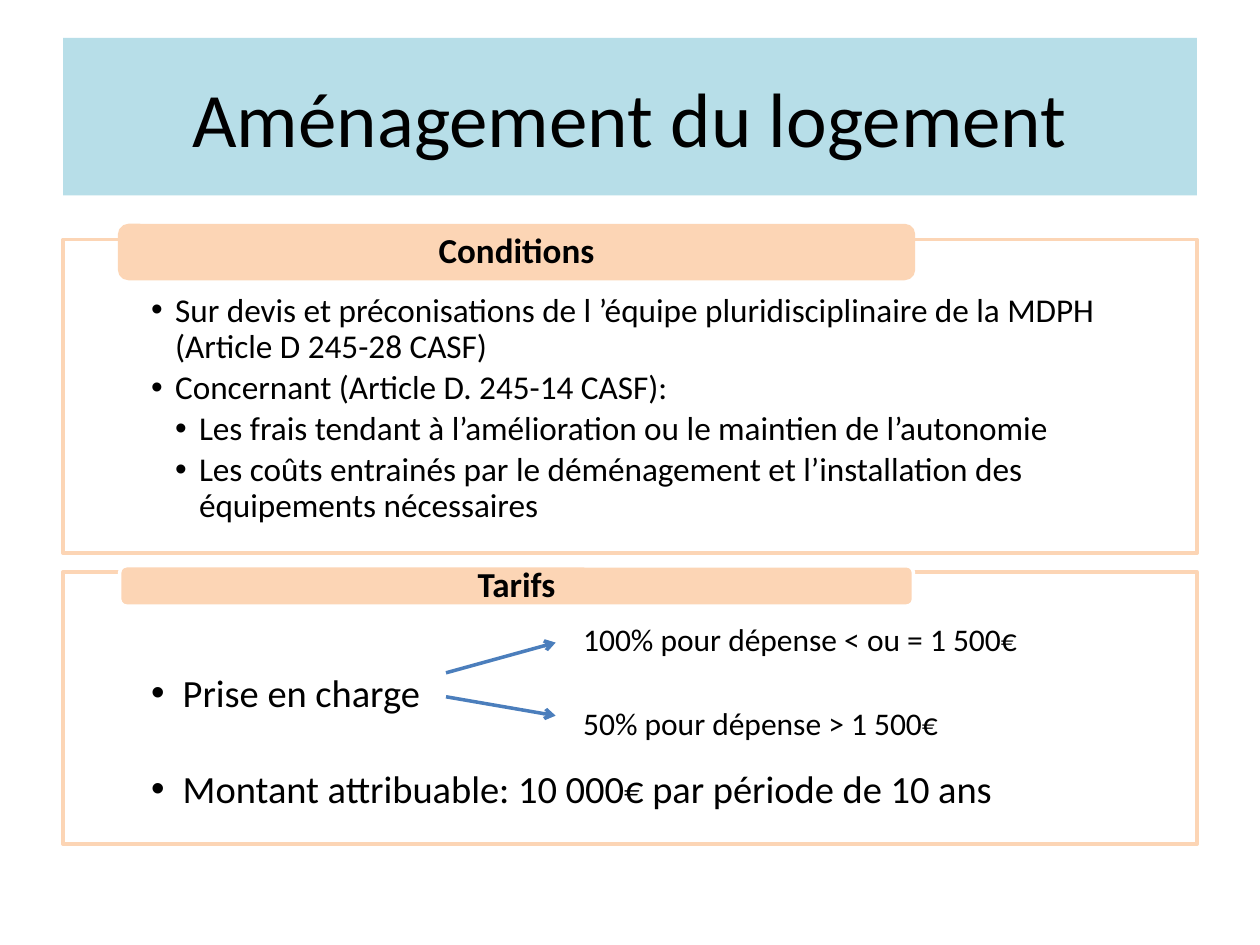
from dataclasses import dataclass

from lxml import etree
from pptx import Presentation
from pptx.dml.color import RGBColor
from pptx.enum.shapes import MSO_CONNECTOR, MSO_SHAPE
from pptx.enum.text import MSO_ANCHOR, MSO_AUTO_SIZE, PP_ALIGN
from pptx.oxml.ns import qn
from pptx.util import Inches, Pt

ROUNDED = MSO_SHAPE.ROUNDED_RECTANGLE
STRAIGHT = MSO_CONNECTOR.STRAIGHT
TOP, MIDDLE = MSO_ANCHOR.TOP, MSO_ANCHOR.MIDDLE
CENTER, LEFT = PP_ALIGN.CENTER, PP_ALIGN.LEFT
NO_FIT, GROW = MSO_AUTO_SIZE.NONE, MSO_AUTO_SIZE.SHAPE_TO_FIT_TEXT
TWO_CONTENT_LAYOUT = 3
MARGIN, CONTENT_WIDTH = 0.5, 9


@dataclass(frozen=True)
class Theme:
    font: str = "Calibri"
    text: RGBColor = RGBColor(0x00, 0x00, 0x00)
    white: RGBColor = RGBColor(0xFF, 0xFF, 0xFF)
    banner: RGBColor = RGBColor(0xB7, 0xDE, 0xE8)
    accent: RGBColor = RGBColor(0xFC, 0xD5, 0xB5)
    arrow: RGBColor = RGBColor(0x4B, 0x7E, 0xBC)
    title_size: int = 44
    heading_size: int = 20
    conditions_size: int = 19
    rates_size: int = 22
    note_size: int = 18
    line_width: int = 2


class SlideBuilder:
    def __init__(self, slide, theme):
        self.slide = slide
        self.theme = theme

    def place(self, shape, left, top, width, height):
        shape.left, shape.top = Inches(left), Inches(top)
        shape.width, shape.height = Inches(width), Inches(height)

    def paint(self, shape, fill, line=None):
        shape.fill.solid()
        shape.fill.fore_color.rgb = fill
        if line is not None:
            shape.line.color.rgb = line
            shape.line.width = Pt(self.theme.line_width)

    def set_frame(self, frame, anchor, left, top, right, bottom):
        frame.word_wrap = True
        frame.auto_size = NO_FIT
        frame.vertical_anchor = anchor
        frame.margin_left, frame.margin_top = Inches(left), Inches(top)
        frame.margin_right, frame.margin_bottom = Inches(right), Inches(bottom)

    def set_text(self, paragraph, text, size, alignment=LEFT, bold=False):
        paragraph.text = text
        paragraph.alignment = alignment
        font = paragraph.font
        font.name, font.size, font.bold = self.theme.font, Pt(size), bold
        font.color.rgb = self.theme.text

    def title(self, text, top, height):
        shape = self.slide.shapes.title
        self.place(shape, MARGIN, top, CONTENT_WIDTH, height)
        self.paint(shape, self.theme.banner)
        shape.text_frame.auto_size = NO_FIT
        shape.text_frame.vertical_anchor = MIDDLE
        self.set_text(shape.text_frame.paragraphs[0], text, self.theme.title_size, CENTER)

    def list_panel(self, index, top, height, items, size, indent, text_top, gap):
        """Fill a body placeholder with (level, text) items, gap points apart."""
        shape = self.slide.placeholders[index]
        self.place(shape, MARGIN, top, CONTENT_WIDTH, height)
        self.paint(shape, self.theme.white, self.theme.accent)
        frame = shape.text_frame
        self.set_frame(frame, TOP, 0.7, text_top, 0.7, 0.15)
        for number, (level, text) in enumerate(items):
            paragraph = frame.add_paragraph() if number else frame.paragraphs[0]
            self.set_text(paragraph, text, size)
            paragraph.level = level
            paragraph.line_spacing = 0.9
            paragraph.space_before, paragraph.space_after = Pt(0), Pt(gap)
            self.bullet(paragraph, indent * (level + 1), indent)

    def bullet(self, paragraph, margin, hanging):
        properties = paragraph._p.get_or_add_pPr()
        properties.set("marL", str(Inches(margin)))
        properties.set("indent", str(-Inches(hanging)))
        mark = etree.Element(qn("a:buChar"), char="•")
        properties.find(qn("a:spcAft")).addnext(mark)

    def heading(self, text, top, height, line):
        shape = self.slide.shapes.add_shape(
            ROUNDED, Inches(0.95), Inches(top), Inches(6.3), Inches(height))
        shape.shadow.inherit = False
        self.paint(shape, self.theme.accent, line)
        self.set_frame(shape.text_frame, MIDDLE, 0.24, 0, 0.24, 0)
        paragraph = shape.text_frame.paragraphs[0]
        self.set_text(paragraph, text, self.theme.heading_size, CENTER, bold=True)
        paragraph.line_spacing = 0.9

    def arrow(self, start, end):
        connector = self.slide.shapes.add_connector(
            STRAIGHT, *(Inches(length) for length in (*start, *end)))
        connector.line.color.rgb = self.theme.arrow
        connector.line.width = Pt(self.theme.line_width)
        line = connector.line._get_or_add_ln()
        etree.SubElement(line, qn("a:tailEnd"), type="arrow")
        etree.SubElement(connector._element.spPr, qn("a:effectLst"))

    def note(self, text, left, top, width):
        box = self.slide.shapes.add_textbox(
            Inches(left), Inches(top), Inches(width), Inches(0.4))
        box.text_frame.word_wrap = True
        box.text_frame.auto_size = GROW
        self.set_text(box.text_frame.paragraphs[0], text, self.theme.note_size)


def main():
    presentation = Presentation()
    presentation.slide_width, presentation.slide_height = Inches(10), Inches(7.5)
    layout = presentation.slide_layouts[TWO_CONTENT_LAYOUT]
    theme = Theme()
    builder = SlideBuilder(presentation.slides.add_slide(layout), theme)

    builder.title("Aménagement du logement", top=0.3, height=1.25)

    conditions = [
        (0, "Sur devis et préconisations de l ’équipe pluridisciplinaire de la MDPH "
            "(Article D 245-28 CASF)"),
        (0, "Concernant (Article D. 245-14 CASF):"),
        (1, "Les frais tendant à l’amélioration ou le maintien de l’autonomie"),
        (1, "Les coûts entrainés par le déménagement et l’installation des "
            "équipements nécessaires"),
    ]
    builder.list_panel(1, 1.9, 2.49, conditions, theme.conditions_size,
                       indent=0.19, text_top=0.43, gap=3)
    builder.heading("Conditions", 1.79, 0.42, theme.accent)

    rates = [
        (0, "Prise en charge"),
        (0, "Montant attribuable: 10 000€ par période de 10 ans"),
    ]
    builder.list_panel(2, 4.54, 2.16, rates, theme.rates_size,
                       indent=0.25, text_top=0.81, gap=31)
    builder.heading("Tarifs", 4.49, 0.32, theme.white)

    builder.arrow((3.54, 5.34), (4.41, 5.1))
    builder.arrow((3.54, 5.53), (4.41, 5.68))
    builder.note("100% pour dépense < ou = 1 500€", 4.53, 4.87, 3.7)
    builder.note("50% pour dépense > 1 500€", 4.53, 5.54, 3.46)

    presentation.save("out.pptx")


if __name__ == "__main__":
    main()
